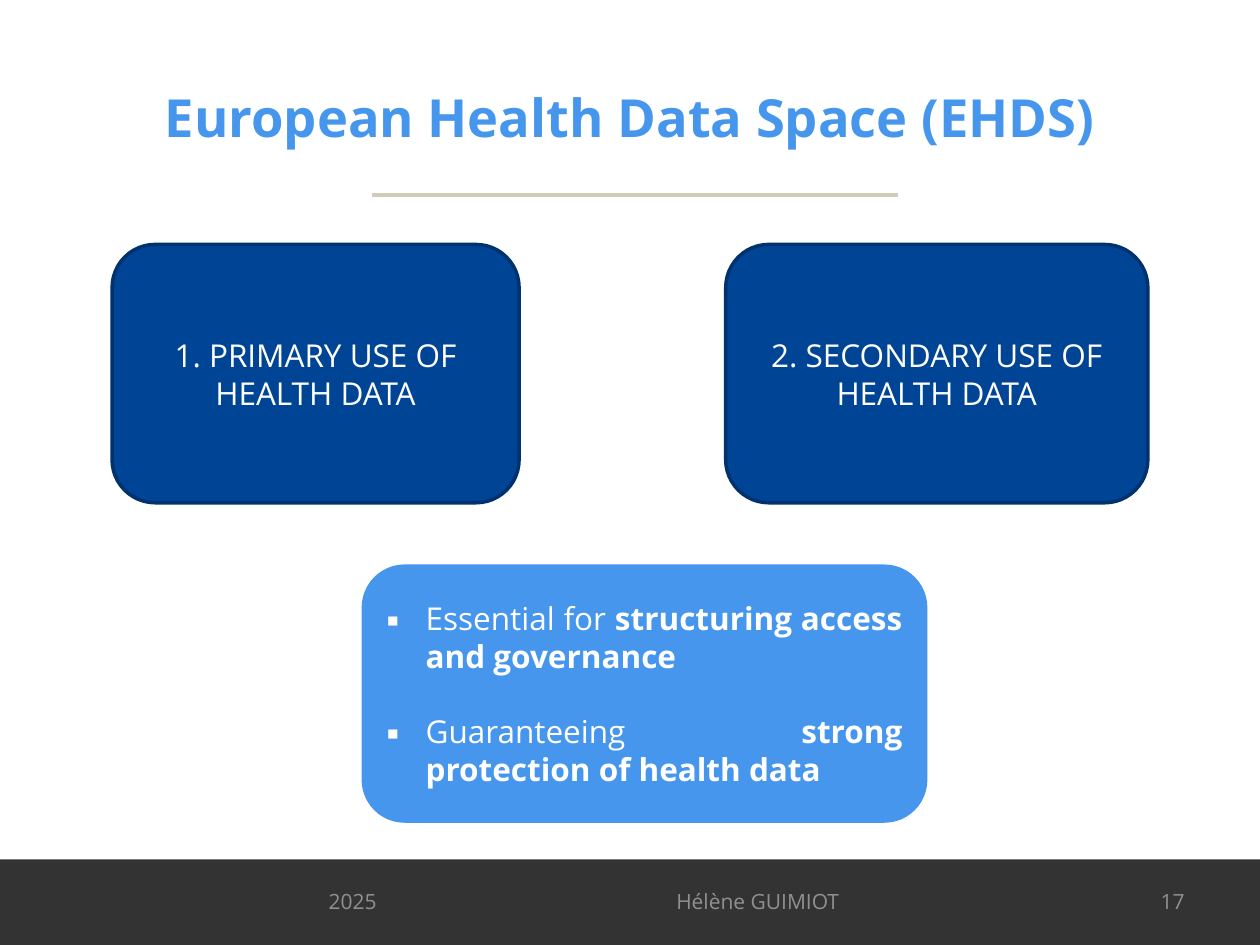
from dataclasses import dataclass

from lxml.etree import SubElement
from pptx import Presentation
from pptx.dml.color import RGBColor
from pptx.enum.shapes import MSO_CONNECTOR, MSO_SHAPE
from pptx.enum.text import MSO_ANCHOR, PP_ALIGN
from pptx.oxml.ns import qn
from pptx.util import Inches, Pt

COLUMNS, ROWS = 100, 75
SLIDE_WIDTH, SLIDE_HEIGHT = Inches(10), Inches(7.5)


@dataclass(frozen=True)
class Theme:
    font: str = "Open Sans"
    sky: str = "4596EC"
    navy: str = "004495"
    navy_edge: str = "00326E"
    sand: str = "D1CCB9"
    charcoal: str = "333333"
    gray: str = "909090"
    white: str = "FFFFFF"
    title_size: float = 30
    body_size: float = 18
    footer_size: float = 12
    bullet_gap: float = 21.5


THEME = Theme()


@dataclass(frozen=True)
class Area:
    """A place on the slide grid, in columns and rows."""
    column: float
    row: float
    columns: float
    rows: float

    def lengths(self) -> tuple:
        return across(self.column), down(self.row), across(self.columns), down(self.rows)


@dataclass(frozen=True)
class Label:
    text: str
    area: Area
    align: PP_ALIGN
    size: float = THEME.footer_size
    color: str = THEME.gray
    bold: bool = False


@dataclass(frozen=True)
class Card:
    text: str
    area: Area


@dataclass(frozen=True)
class Bullet:
    lead: str
    emphasis: str


LABELS = (
    Label("European Health Data Space (EHDS)", Area(5, 3, 90, 12.5), PP_ALIGN.CENTER,
          THEME.title_size, THEME.sky, True),
    Label("2025", Area(25.1, 69.5, 23.3, 4), PP_ALIGN.LEFT),
    Label("Hélène GUIMIOT", Area(44.3, 69.5, 31.7, 4), PP_ALIGN.CENTER),
    Label("17", Area(71.7, 69.5, 23.3, 4), PP_ALIGN.RIGHT),
)
CARDS = (
    Card("1. PRIMARY USE OF HEALTH DATA", Area(8.9, 19.4, 32.3, 20.5)),
    Card("2. SECONDARY USE OF HEALTH DATA", Area(57.6, 19.4, 33.5, 20.5)),
)
BULLETS = (
    Bullet("Essential for ", "structuring access and governance"),
    Bullet("Guaranteeing ", "strong protection of health data"),
)


def across(columns: float) -> int:
    return round(SLIDE_WIDTH * columns / COLUMNS)


def down(rows: float) -> int:
    return round(SLIDE_HEIGHT * rows / ROWS)


def rgb(color: str) -> RGBColor:
    return RGBColor.from_string(color)


def set_font(paragraph, size: float, color: str, bold: bool = False) -> None:
    font = paragraph.font
    font.name, font.size, font.bold = THEME.font, Pt(size), bold
    font.color.rgb = rgb(color)


def prepare_frame(shape):
    frame = shape.text_frame
    frame.word_wrap = True
    frame.vertical_anchor = MSO_ANCHOR.MIDDLE
    return frame


def write_line(shape, text: str, align: PP_ALIGN, size: float, color: str,
               bold: bool = False) -> None:
    paragraph = prepare_frame(shape).paragraphs[0]
    paragraph.text = text
    paragraph.alignment = align
    set_font(paragraph, size, color, bold)


def add_panel(slide, kind: MSO_SHAPE, area: Area, fill: str, edge: str | None = None):
    shape = slide.shapes.add_shape(kind, *area.lengths())
    shape.shadow.inherit = False
    shape.fill.solid()
    shape.fill.fore_color.rgb = rgb(fill)
    if edge:
        shape.line.color.rgb = rgb(edge)
        shape.line.width = Pt(2)
    else:
        shape.line.fill.background()
    return shape


def add_title_rule(slide) -> None:
    rule = slide.shapes.add_connector(MSO_CONNECTOR.STRAIGHT, across(29.5), down(15.5),
                                      across(71.3), down(15.5))
    rule.line.color.rgb = rgb(THEME.sand)
    rule.line.width = Pt(2.25)
    SubElement(rule._element.spPr, qn("a:effectLst"))


def add_label(slide, label: Label) -> None:
    box = slide.shapes.add_textbox(*label.area.lengths())
    write_line(box, label.text, label.align, label.size, label.color, label.bold)


def add_card(slide, card: Card) -> None:
    shape = add_panel(slide, MSO_SHAPE.ROUNDED_RECTANGLE, card.area,
                      THEME.navy, THEME.navy_edge)
    write_line(shape, card.text, PP_ALIGN.CENTER, THEME.body_size, THEME.white)


def set_bullet(paragraph) -> None:
    properties = paragraph._p.get_or_add_pPr()
    indent = Inches(0.31)
    properties.set("marL", str(indent))
    properties.set("indent", str(-indent))
    color = SubElement(properties, qn("a:buClr"))
    SubElement(color, qn("a:srgbClr"), val=THEME.white)
    SubElement(properties, qn("a:buFont"), typeface=THEME.font)
    SubElement(properties, qn("a:buChar"), char="▪")


def add_summary(slide, area: Area, bullets: tuple[Bullet, ...]) -> None:
    frame = prepare_frame(add_panel(slide, MSO_SHAPE.ROUNDED_RECTANGLE, area, THEME.sky))
    for index, bullet in enumerate(bullets):
        paragraph = frame.add_paragraph() if index else frame.paragraphs[0]
        set_bullet(paragraph)
        paragraph.alignment = PP_ALIGN.JUSTIFY
        if index:
            paragraph.space_before = Pt(THEME.bullet_gap)
        set_font(paragraph, THEME.body_size, THEME.white)
        paragraph.add_run().text = bullet.lead
        emphasis = paragraph.add_run()
        emphasis.text = bullet.emphasis
        emphasis.font.bold = True


def main() -> None:
    presentation = Presentation()
    presentation.slide_width, presentation.slide_height = SLIDE_WIDTH, SLIDE_HEIGHT
    slide = presentation.slides.add_slide(presentation.slide_layouts[6])
    add_panel(slide, MSO_SHAPE.RECTANGLE, Area(0, 68.2, COLUMNS, ROWS - 68.2), THEME.charcoal)
    add_title_rule(slide)
    for label in LABELS:
        add_label(slide, label)
    for card in CARDS:
        add_card(slide, card)
    add_summary(slide, Area(28.7, 44.8, 44.9, 20.5), BULLETS)
    presentation.save("out.pptx")


if __name__ == "__main__":
    main()
